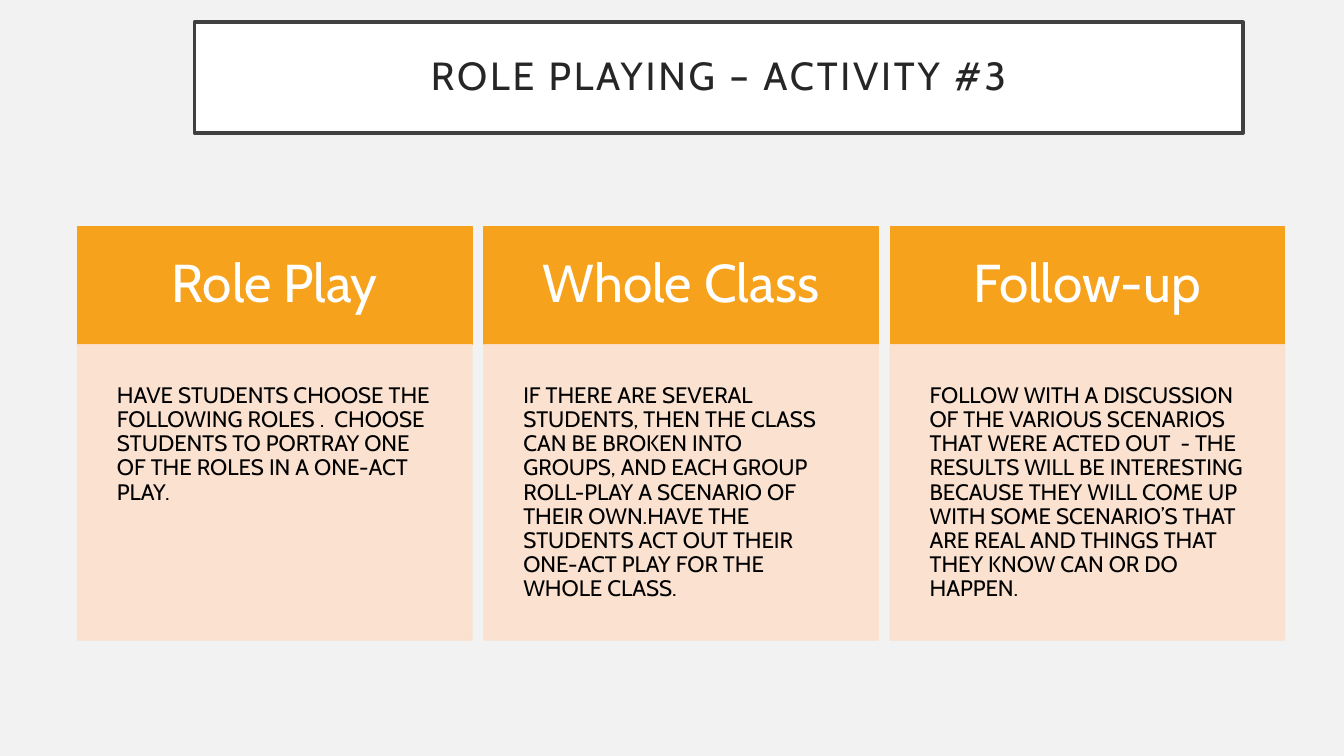
from pptx import Presentation
from pptx.dml.color import RGBColor
from pptx.enum.shapes import MSO_SHAPE
from pptx.enum.text import MSO_ANCHOR, MSO_AUTO_SIZE, PP_ALIGN
from pptx.oxml.ns import qn
from pptx.util import Inches, Pt
from lxml.etree import SubElement

FONT = "Cabin"
COLORS = {
    "background": "F2F2F2",
    "title_fill": "FFFFFF",
    "title_line": "404040",
    "title_text": "262626",
    "header": "F6A21D",
    "header_text": "FFFFFF",
    "body": "FBE0CD",
    "body_text": "000000",
}
TITLE = "ROLE PLAYING – ACTIVITY #3"
CARDS = [
    ("Role Play",
     "HAVE STUDENTS CHOOSE THE FOLLOWING ROLES .  CHOOSE STUDENTS TO PORTRAY "
     "ONE OF THE ROLES IN A ONE-ACT PLAY."),
    ("Whole Class",
     "IF THERE ARE SEVERAL STUDENTS, THEN THE CLASS CAN BE BROKEN INTO GROUPS, "
     "AND EACH GROUP ROLL-PLAY A SCENARIO OF THEIR OWN.HAVE THE STUDENTS ACT "
     "OUT THEIR ONE-ACT PLAY FOR THE WHOLE CLASS."),
    ("Follow-up",
     "FOLLOW WITH A DISCUSSION OF THE VARIOUS SCENARIOS THAT WERE ACTED OUT  - "
     "THE RESULTS WILL BE INTERESTING BECAUSE THEY WILL COME UP WITH SOME "
     "SCENARIO’S THAT ARE REAL AND THINGS THAT THEY KNOW CAN OR DO HAPPEN."),
]
CARD_LEFT, CARD_TOP, CARD_PITCH = 0.77, 2.25, 4.03
CARD_WIDTH, CARD_HEIGHT, HEADER_HEIGHT = 3.91, 4.1, 1.17


def color(name):
    return RGBColor.from_string(COLORS[name])


def paint(shape, fill, line, width):
    shape.fill.solid()
    shape.fill.fore_color.rgb = color(fill)
    shape.line.color.rgb = color(line)
    shape.line.width = Pt(width)


def write(shape, text, size, text_color, inset, align, anchor):
    tf = shape.text_frame
    margins = {f"margin_{side}": Inches(inset)
               for side in ("left", "top", "right", "bottom")}
    frame_format = {"word_wrap": True, "auto_size": MSO_AUTO_SIZE.NONE,
                    "vertical_anchor": anchor, **margins}
    for name, value in frame_format.items():
        setattr(tf, name, value)
    p = tf.paragraphs[0]
    p.alignment = align
    p.line_spacing = 0.9
    r = p.add_run()
    r.text = text
    for name, value in {"name": FONT, "size": Pt(size), "bold": False}.items():
        setattr(r.font, name, value)
    r.font.color.rgb = color(text_color)
    return r


def add_title(s, left, top, width, height):
    title = s.shapes.title
    box = {"left": left, "top": top, "width": width, "height": height}
    for name, value in box.items():
        setattr(title, name, Inches(value))
    paint(title, "title_fill", "title_line", 2.5)
    r = write(title, TITLE, 28, "title_text", 0.2,
              PP_ALIGN.CENTER, MSO_ANCHOR.MIDDLE)
    r.font._element.set("spc", "200")


def add_panel(s, left, top, width, height, fill):
    panel = s.shapes.add_shape(MSO_SHAPE.RECTANGLE, Inches(left), Inches(top),
                               Inches(width), Inches(height))
    panel.shadow.inherit = False
    paint(panel, fill, fill, 1)
    return panel


def add_card(s, left, top, width, height, heading, text):
    header = add_panel(s, left, top, width, HEADER_HEIGHT, "header")
    write(header, heading, 38, "header_text", 0.31,
          PP_ALIGN.CENTER, MSO_ANCHOR.MIDDLE)
    body = add_panel(s, left, top + HEADER_HEIGHT, width,
                     height - HEADER_HEIGHT, "body")
    for clr in body._element.spPr.iter(qn("a:srgbClr")):
        SubElement(clr, qn("a:alpha")).set("val", "90000")
    write(body, text, 16, "body_text", 0.39, PP_ALIGN.LEFT, MSO_ANCHOR.TOP)


def main():
    prs = Presentation()
    prs.slide_width, prs.slide_height = Inches(13.33), Inches(7.5)
    s = prs.slides.add_slide(prs.slide_layouts[5])
    s.background.fill.solid()
    s.background.fill.fore_color.rgb = color("background")
    add_title(s, 1.93, 0.22, 10.4, 1.1)
    for i, (heading, text) in enumerate(CARDS):
        add_card(s, CARD_LEFT + i * CARD_PITCH, CARD_TOP,
                 CARD_WIDTH, CARD_HEIGHT, heading, text)
    prs.save("out.pptx")


if __name__ == "__main__":
    main()
